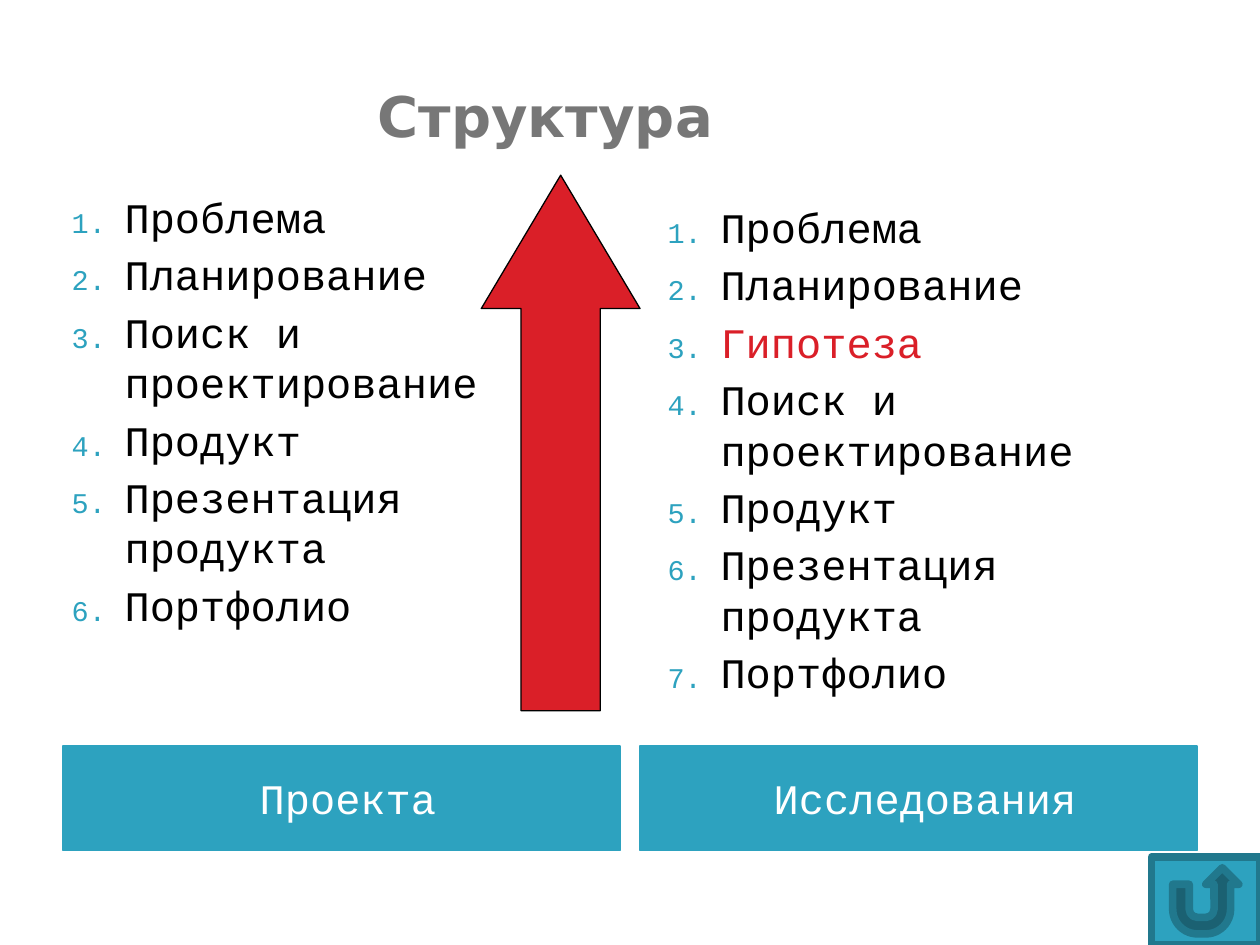
"""Builds a slide comparing the structure of a project and of a research study."""
import pptx
import pptx.dml.color
import pptx.enum.shapes
import pptx.enum.text
import pptx.util
from lxml import etree
from pptx.util import Inches

SHAPES = pptx.enum.shapes.MSO_SHAPE
MIDDLE = pptx.enum.text.MSO_ANCHOR.MIDDLE
CENTER = pptx.enum.text.PP_ALIGN.CENTER
TEAL, RED, BLACK, WHITE = "2DA2BF", "DA1F28", "000000", "FFFFFF"
BODY = {"name": "Courier New", "size": pptx.util.Pt(24)}
TITLE = {"name": "DejaVu Sans", "size": pptx.util.Pt(32), "bold": True}
COLUMN_WIDTH = 4.42
RIGHT_COLUMN = 5.08


def color(value):
    """Turn a hex string into a color."""
    return pptx.dml.color.RGBColor.from_string(value)


def set_values(target, values):
    """Set each attribute of the target from a dict."""
    for name, value in values.items():
        setattr(target, name, value)


def add_span(para, text, style, hex_color):
    """Add a styled run of text to a paragraph."""
    span = para.add_run()
    span.text = text
    set_values(span.font, style)
    span.font.color.rgb = color(hex_color)


def add_box(page, area):
    """Add a wrapping text box and return its frame."""
    frame = page.shapes.add_textbox(*map(Inches, area)).text_frame
    frame.word_wrap = True
    return frame


def add_figure(page, kind, area, fill, line, width):
    """Add a flat preset shape with a solid fill and outline."""
    figure = page.shapes.add_shape(kind, *map(Inches, area))
    figure.shadow.inherit = False
    figure.fill.solid()
    figure.fill.fore_color.rgb = color(fill)
    figure.line.color.rgb = color(line)
    figure.line.width = pptx.util.Pt(width)
    return figure


def add_heading(page, left, text):
    """Add the filled heading bar of a column."""
    area = (left, 5.92, COLUMN_WIDTH, 0.83)
    frame = add_figure(page, SHAPES.RECTANGLE, area, TEAL, TEAL, 0.75).text_frame
    set_values(frame, {"word_wrap": True, "vertical_anchor": MIDDLE,
                       "margin_left": Inches(0.2)})
    para = frame.paragraphs[0]
    para.alignment = CENTER
    add_span(para, text, BODY, WHITE)


def number_paragraph(para):
    """Give a paragraph a hanging indent and a small teal number."""
    properties = para._p.get_or_add_pPr()
    properties.set("marL", str(Inches(0.54)))
    properties.set("indent", str(Inches(-0.42)))

    def add(parent, tag, **values):
        return etree.SubElement(parent, pptx.oxml.ns.qn(tag), **values)

    add(add(properties, "a:buClr"), "a:srgbClr", val=TEAL)
    add(properties, "a:buSzPct", val="68000")
    add(properties, "a:buFont", typeface=BODY["name"])
    add(properties, "a:buAutoNum", type="arabicPeriod")


def add_steps(page, left, top, steps, highlight=None):
    """Add a numbered list of steps with one optionally highlighted."""
    frame = add_box(page, (left, top, COLUMN_WIDTH, 4.31))
    for index, step in enumerate(steps):
        para = frame.add_paragraph() if index else frame.paragraphs[0]
        number_paragraph(para)
        if index:
            para.space_before = pptx.util.Pt(4)
        add_span(para, step, BODY, RED if step == highlight else BLACK)


def add_title(page, text):
    """Add the centered slide title."""
    para = add_box(page, (0.67, 0.6, 7.32, 0.63)).paragraphs[0]
    para.alignment = CENTER
    add_span(para, text, TITLE, "777777")


def main():
    """Build and save the deck."""
    deck = pptx.Presentation()
    set_values(deck, {"slide_width": Inches(10), "slide_height": Inches(7.5)})
    page = deck.slides.add_slide(deck.slide_layouts[6])
    project = ["Проблема", "Планирование", "Поиск и проектирование",
               "Продукт", "Презентация продукта", "Портфолио"]
    hypothesis = "Гипотеза"
    research = project[:2] + [hypothesis] + project[2:]
    add_heading(page, 0.5, "Проекта")
    add_heading(page, RIGHT_COLUMN, "Исследования")
    add_steps(page, 0.35, 1.47, project)
    add_steps(page, RIGHT_COLUMN, 1.55, research, hypothesis)
    add_title(page, "Структура")
    arrow = add_figure(page, SHAPES.UP_ARROW, (3.82, 1.39, 1.26, 4.25), RED, BLACK, 0.75)
    arrow.adjustments[1] = 0.84
    add_figure(page, SHAPES.ACTION_BUTTON_RETURN, (9.14, 6.8, 0.86, 0.7),
               TEAL, "21788D", 4.33)
    deck.save("out.pptx")


if __name__ == "__main__":
    main()
